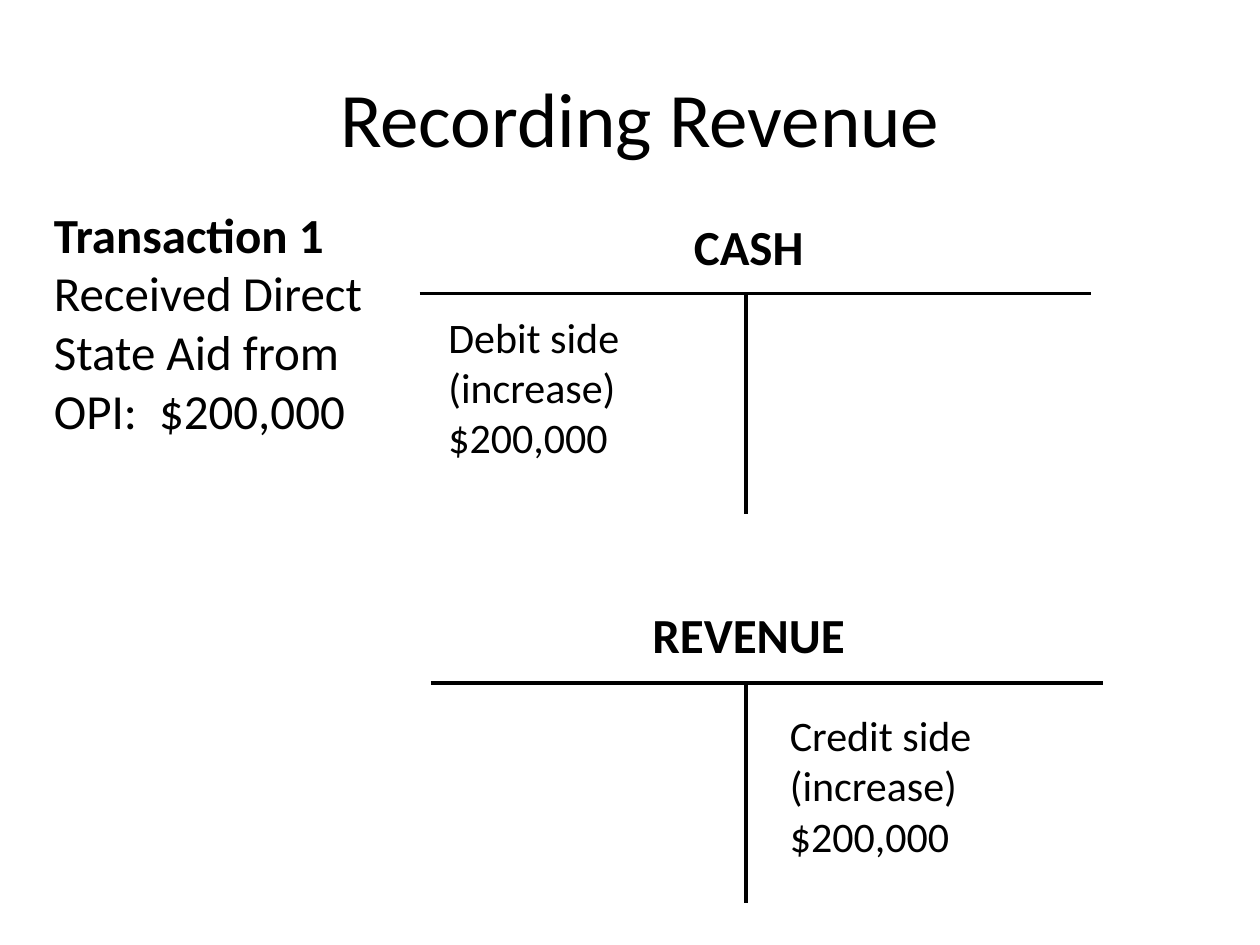
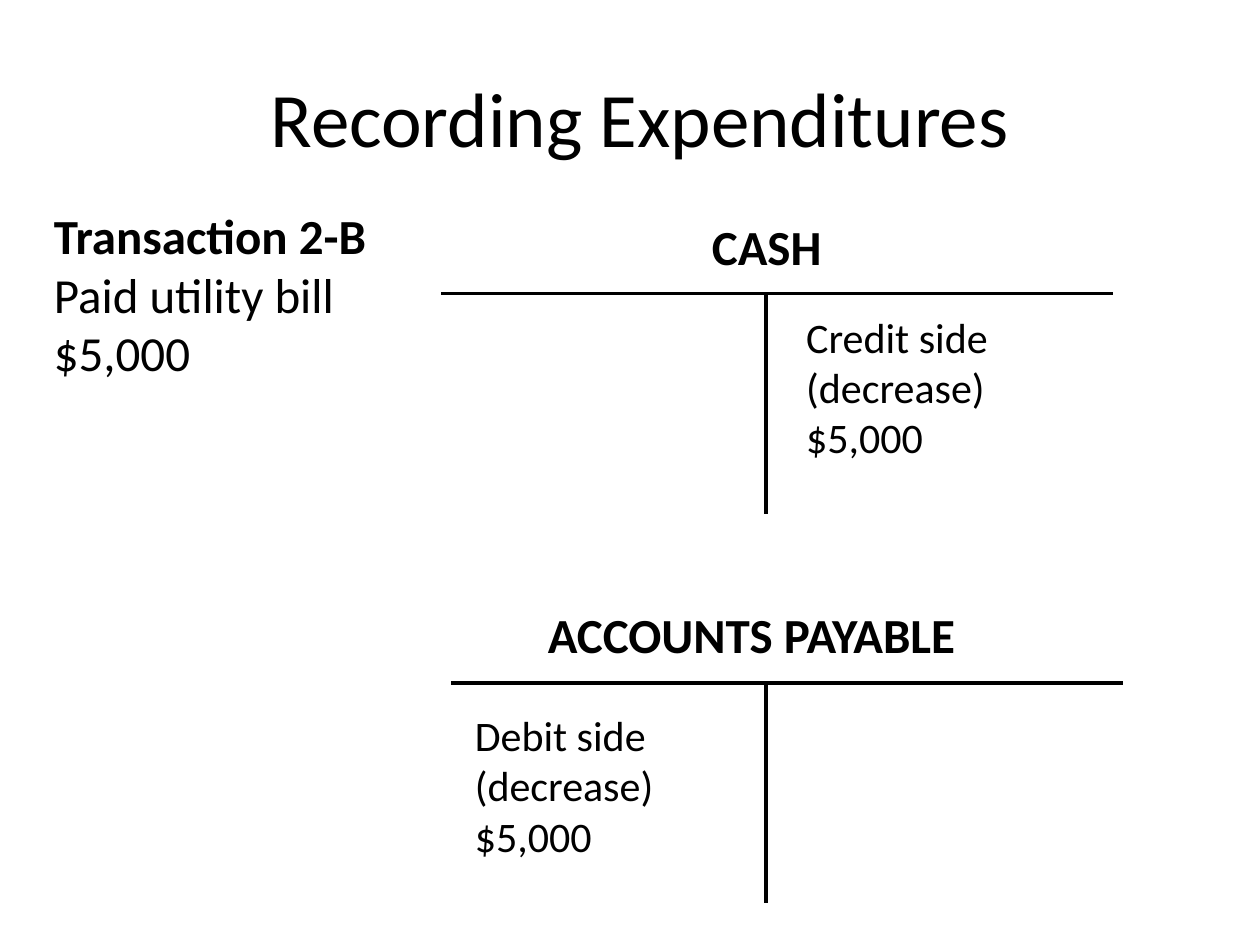
from dataclasses import dataclass

from lxml import etree
from pptx import Presentation
from pptx import util as u
from pptx.dml.color import RGBColor
from pptx.enum import shapes, text
from pptx.oxml import ns


@dataclass(frozen=True)
class Theme:
    font: str = "Calibri"
    ink: RGBColor = RGBColor(0, 0, 0)
    paper: RGBColor = RGBColor(255, 255, 255)
    title_size: int = 44
    heading_size: int = 28
    entry_size: int = 24
    line_width: int = 2


theme = Theme()
LEFT, CENTER = text.PP_ALIGN.LEFT, text.PP_ALIGN.CENTER
ACCOUNT_WIDTH, STEM_HEIGHT = 5.33, 1.75
ENTRY_WIDTH, ENTRY_HEIGHT = 2.29, 1.31
HEADING_HEIGHT = 0.57
ACCOUNT_ROWS = [
    {"heading": 1.67, "bar": 2.33, "entry": 2.42},
    {"heading": 4.75, "bar": 5.42, "entry": 5.58},
]

transactions = [
    {
        "title": "Recording Revenue",
        "label": "Transaction 1",
        "description": "Received Direct State Aid from OPI:  $200,000",
        "top": 1.57,
        "height": 1.99,
        "stem": 5.92,
        "accounts": [
            {"name": "CASH", "left": 5.41, "width": 1.17, "align": LEFT, "bar": 3.33,
             "entry_left": 3.46, "entry": ["Debit side", "(increase)", "$200,000"]},
            {"name": "REVENUE", "left": 5.08, "width": 1.83, "align": LEFT, "bar": 3.42,
             "entry_left": 6.17, "entry": ["Credit side", "(increase)", "$200,000"]},
        ],
    },
    {
        "title": "Recording Expenditures",
        "label": "Transaction 2-B",
        "description": "Paid utility bill $5,000",
        "top": 1.58,
        "height": 1.51,
        "stem": 6.08,
        "accounts": [
            {"name": "CASH", "left": 5.17, "width": 1.83, "align": CENTER, "bar": 3.5,
             "entry_left": 6.3, "entry": ["Credit side", "(decrease)", "$5,000"]},
            {"name": "ACCOUNTS PAYABLE", "left": 4.25, "width": 4, "align": LEFT, "bar": 3.58,
             "entry_left": 3.67, "entry": ["Debit side", "(decrease)", "$5,000"]},
        ],
    },
]


def write_text(shape, lines, size, bold_lines=0, align=LEFT):
    frame = shape.text_frame
    frame.word_wrap = True
    frame.text = "\n".join(lines)
    for index, paragraph in enumerate(frame.paragraphs):
        paragraph.alignment = align
        for run in paragraph.runs:
            run.font.name = theme.font
            run.font.size = u.Pt(size)
            run.font.bold = index < bold_lines
            run.font.color.rgb = theme.ink


def add_line(slide, start, end):
    points = [u.Inches(value) for value in (*start, *end)]
    line = slide.shapes.add_connector(shapes.MSO_CONNECTOR.STRAIGHT, *points)
    line.line.color.rgb = theme.ink
    line.line.width = u.Pt(theme.line_width)
    etree.SubElement(line.element.spPr, ns.qn("a:effectLst"))


presentation = Presentation()
presentation.slide_width = u.Inches(10)
presentation.slide_height = u.Inches(7.5)
title_only = presentation.slide_layouts[5]

for transaction in transactions:
    slide = presentation.slides.add_slide(title_only)
    slide.background.fill.solid()
    slide.background.fill.fore_color.rgb = theme.paper

    title = slide.shapes.title
    title.left, title.top = u.Inches(0.58), u.Inches(0.3)
    title.width, title.height = u.Inches(9), u.Inches(1.25)
    title.text_frame.vertical_anchor = text.MSO_ANCHOR.MIDDLE
    write_text(title, [transaction["title"]], theme.title_size, align=CENTER)

    stem = transaction["stem"]
    for account, row in zip(transaction["accounts"], ACCOUNT_ROWS):
        bar_left, bar_top = account["bar"], row["bar"]
        add_line(slide, (bar_left, bar_top), (bar_left + ACCOUNT_WIDTH, bar_top))
        add_line(slide, (stem, bar_top), (stem, bar_top + STEM_HEIGHT))

        heading = slide.shapes.add_textbox(
            u.Inches(account["left"]), u.Inches(row["heading"]),
            u.Inches(account["width"]), u.Inches(HEADING_HEIGHT))
        write_text(heading, [account["name"]], theme.heading_size, 1, account["align"])

        entry = slide.shapes.add_textbox(
            u.Inches(account["entry_left"]), u.Inches(row["entry"]),
            u.Inches(ENTRY_WIDTH), u.Inches(ENTRY_HEIGHT))
        write_text(entry, account["entry"], theme.entry_size)

    summary = slide.shapes.add_textbox(
        u.Inches(0.33), u.Inches(transaction["top"]),
        u.Inches(2.83), u.Inches(transaction["height"]))
    write_text(summary, [transaction["label"], transaction["description"]],
               theme.heading_size, 1)

presentation.save("out.pptx")
